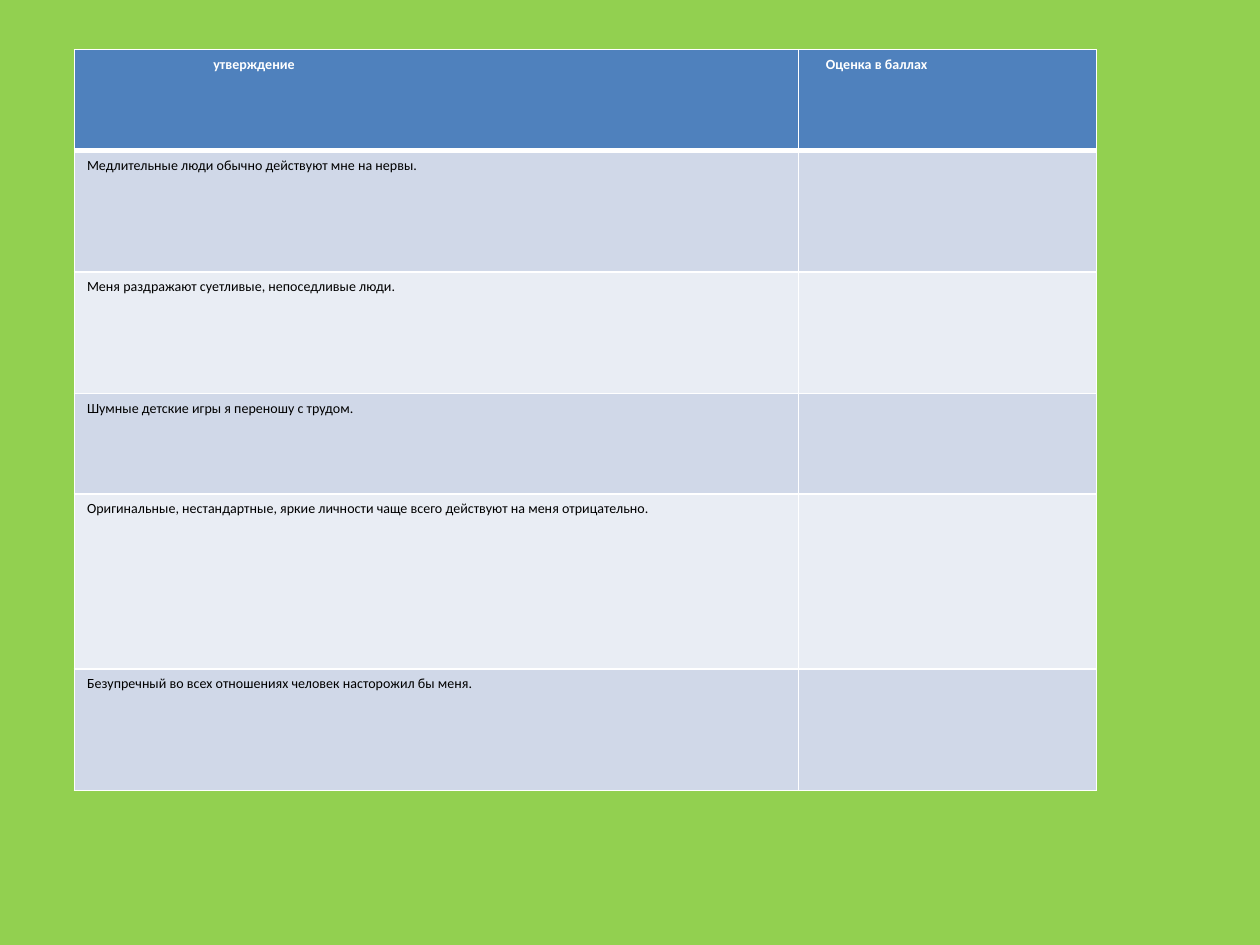
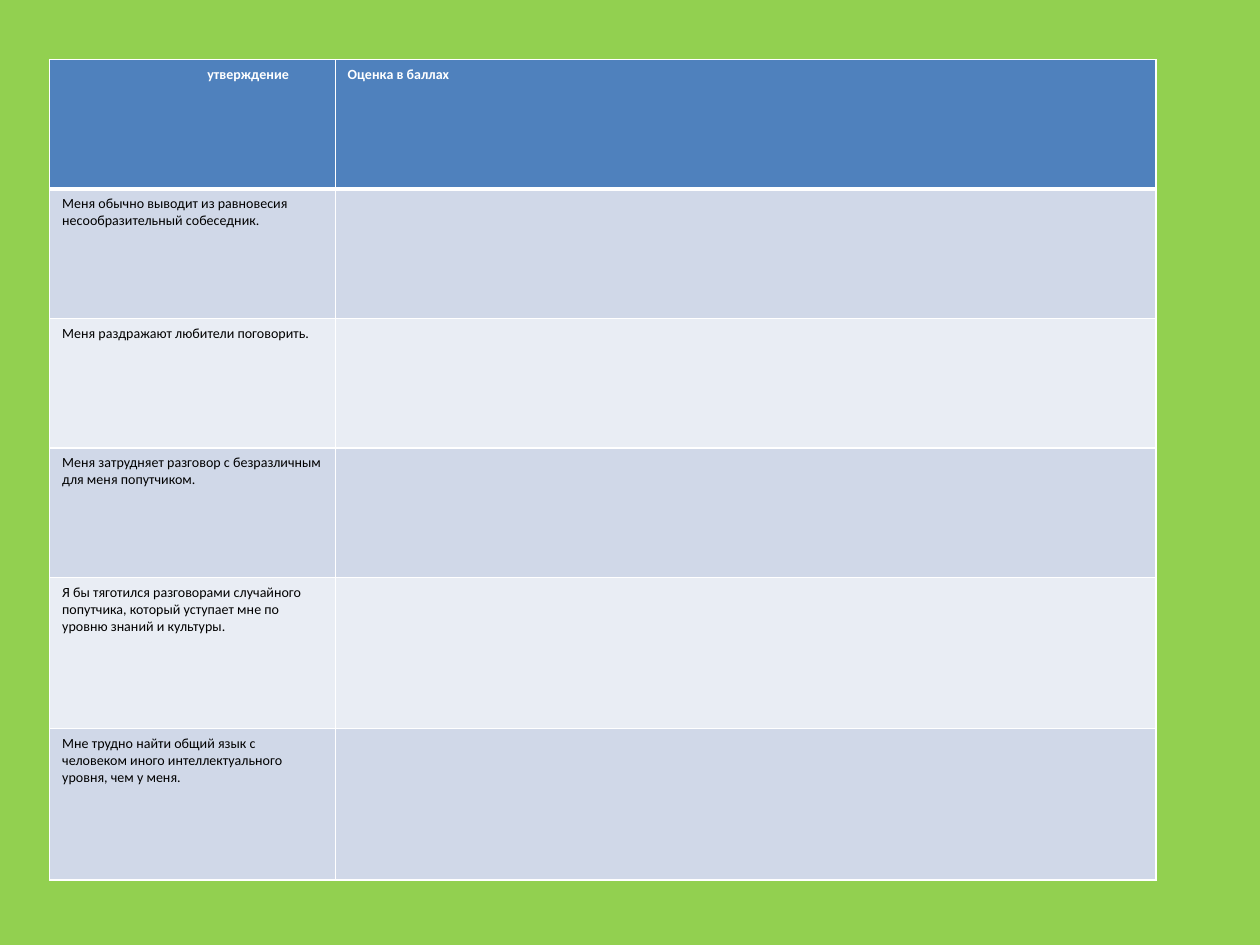
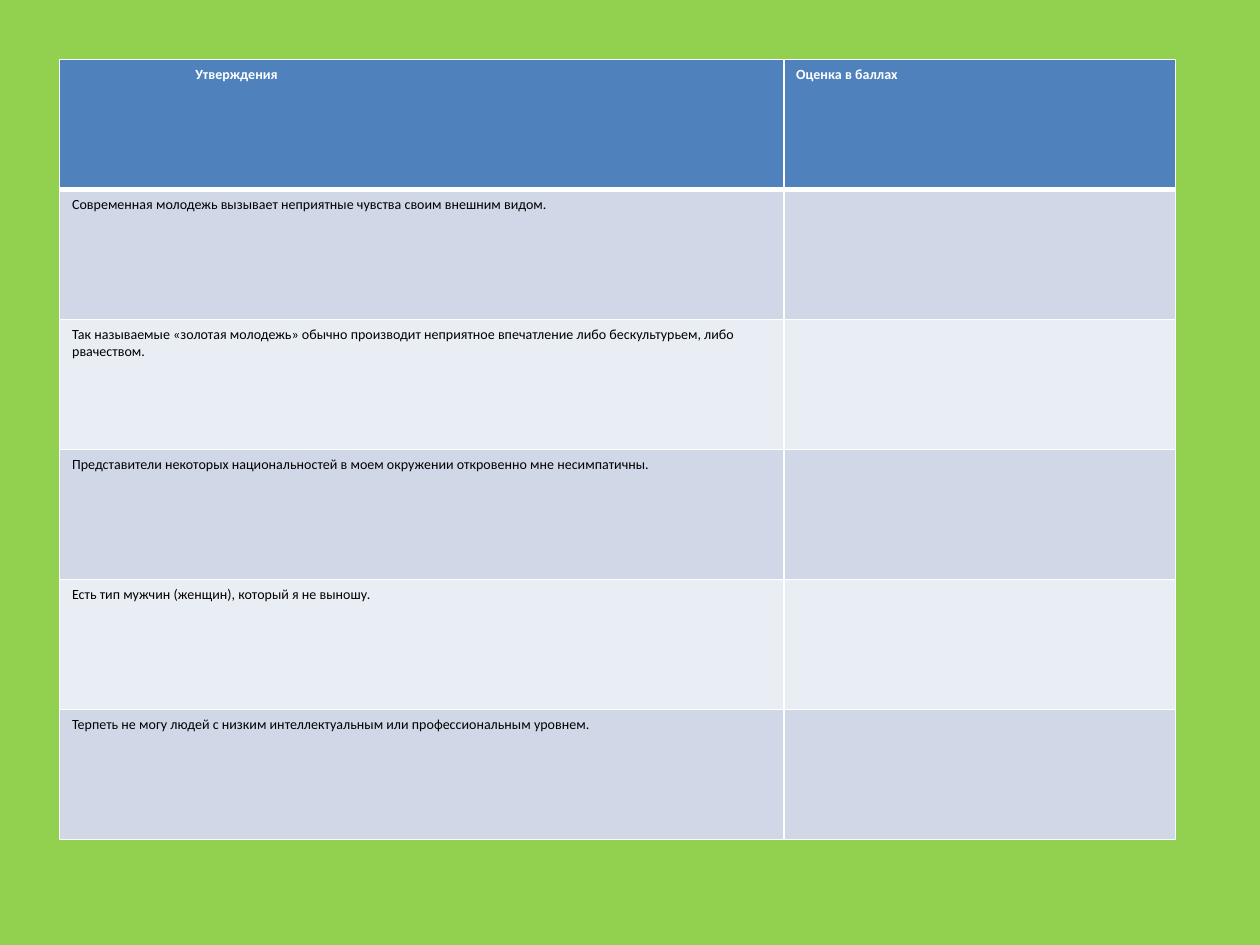
"""Builds three questionnaire slides, each with a table of statements to be scored."""
from lxml import etree
from pptx import Presentation
from pptx.dml.color import RGBColor
from pptx.oxml.ns import qn
from pptx.util import Cm, Pt

BACKGROUND = "92D050"
HEADER_FILL = "4F81BD"
BAND_FILLS = ["E9EDF4", "D0D8E8"]
WHITE = "FFFFFF"
BLACK = "000000"
FONT = "Calibri"
TEXT_SIZE = Pt(8)
GRID_WIDTH = Pt(1)
HEADER_RULE_WIDTH = Pt(3)

SCORE_HEADING = "Оценка в баллах"
QUESTIONNAIRES = [
    {
        "left": 1.5, "top": 1,
        "columns": [14.6, 6],
        "rows": [2.03, 2.45, 2.45, 2.03, 3.53, 2.45],
        "heading": "утверждение",
        "indents": [2.8, 0.55],
        "statements": [
            "Медлительные люди обычно действуют мне на нервы.",
            "Меня раздражают суетливые, непоседливые люди.",
            "Шумные детские игры я переношу с трудом.",
            "Оригинальные, нестандартные, яркие личности чаще всего действуют на меня отрицательно.",
            "Безупречный во всех отношениях человек насторожил бы меня.",
        ],
    },
    {
        "left": 1, "top": 1.2,
        "columns": [5.76, 16.54],
        "rows": [2.61] * 4 + [3.05] * 2,
        "heading": "утверждение",
        "indents": [3.18, 0.25],
        "statements": [
            "Меня обычно выводит из равновесия несообразительный собеседник.",
            "Меня раздражают любители поговорить.",
            "Меня затрудняет разговор с безразличным для меня попутчиком.",
            "Я бы тяготился разговорами случайного попутчика, который уступает мне по уровню знаний и культуры.",
            "Мне трудно найти общий язык с человеком иного интеллектуального уровня, чем у меня.",
        ],
    },
    {
        "left": 1.2, "top": 1.2,
        "columns": [14.6, 7.9],
        "rows": [2.62] * 6,
        "heading": "Утверждения",
        "indents": [2.74, 0.25],
        "statements": [
            "Современная молодежь вызывает неприятные чувства своим внешним видом.",
            "Так называемые «золотая молодежь» обычно производит неприятное впечатление "
            "либо бескультурьем, либо рвачеством.",
            "Представители некоторых национальностей в моем окружении откровенно мне несимпатичны.",
            "Есть тип мужчин (женщин), который я не выношу.",
            "Терпеть не могу людей с низким интеллектуальным или профессиональным уровнем.",
        ],
    },
]


def paint(fill, color):
    fill.solid()
    fill.fore_color.rgb = RGBColor.from_string(color)


def add_border(cell, side, width):
    line = etree.SubElement(cell._tc.get_or_add_tcPr(), qn(f"a:ln{side}"), w=str(width))
    solid = etree.SubElement(line, qn("a:solidFill"))
    etree.SubElement(solid, qn("a:srgbClr"), val=WHITE)


prs = Presentation()
prs.slide_width = Cm(25.4)
prs.slide_height = Cm(19.05)

for questionnaire in QUESTIONNAIRES:
    slide = prs.slides.add_slide(prs.slide_layouts[6])
    paint(slide.background.fill, BACKGROUND)

    columns, rows = questionnaire["columns"], questionnaire["rows"]
    grid = slide.shapes.add_table(
        len(rows), len(columns), Cm(questionnaire["left"]), Cm(questionnaire["top"]),
        Cm(sum(columns)), Cm(sum(rows))).table
    for column, width in zip(grid.columns, columns):
        column.width = Cm(width)
    for row, height in zip(grid.rows, rows):
        row.height = Cm(height)

    lines = [[questionnaire["heading"], SCORE_HEADING]]
    lines += [[statement, ""] for statement in questionnaire["statements"]]
    for row_index, line_texts in enumerate(lines):
        is_header = row_index == 0
        for column_index, text in enumerate(line_texts):
            cell = grid.cell(row_index, column_index)
            above = HEADER_RULE_WIDTH if row_index == 1 else GRID_WIDTH
            below = HEADER_RULE_WIDTH if is_header else GRID_WIDTH
            for side, width in zip("LRTB", [GRID_WIDTH, GRID_WIDTH, above, below]):
                add_border(cell, side, width)
            paint(cell.fill, HEADER_FILL if is_header else BAND_FILLS[row_index % 2])
            if is_header:
                cell.margin_left = Cm(questionnaire["indents"][column_index])
            if text:
                run = cell.text_frame.paragraphs[0].add_run()
                run.text = text
                run.font.name = FONT
                run.font.size = TEXT_SIZE
                run.font.bold = is_header
                paint(run.font.fill, WHITE if is_header else BLACK)

prs.save("out.pptx")
